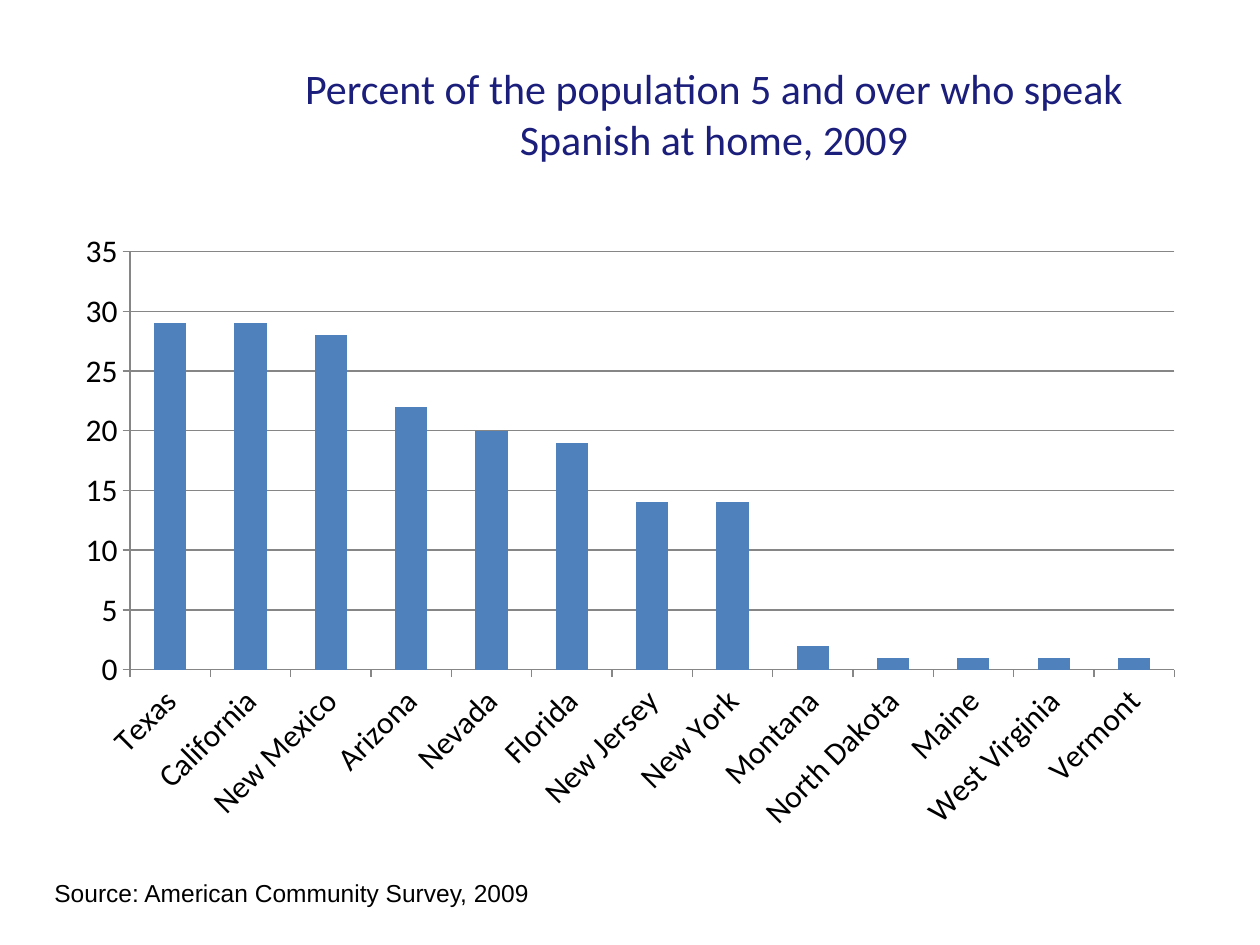
from pptx import Presentation
from pptx import util as u
from pptx.chart.data import CategoryChartData
from pptx.dml.color import RGBColor
from pptx.enum import chart as ch, text

EMU_PER_PX = 914400 / 126

SPANISH_SPEAKERS = {
    "Texas": 29,
    "California": 29,
    "New Mexico": 28,
    "Arizona": 22,
    "Nevada": 20,
    "Florida": 19,
    "New Jersey": 14,
    "New York": 14,
    "Montana": 2,
    "North Dakota": 1,
    "Maine": 1,
    "West Virginia": 1,
    "Vermont": 1,
}


def px(length):
    return u.Emu(round(length * EMU_PER_PX))


def colour(value):
    return RGBColor.from_string(value)


def style_font(font, size, name, hue):
    font.size = u.Pt(size)
    font.name = name
    font.bold = False
    font.color.rgb = colour(hue)


def write(frame, words, size, name, hue="000000", align=text.PP_ALIGN.LEFT,
          anchor=text.MSO_ANCHOR.TOP, wrap=True, fit=text.MSO_AUTO_SIZE.NONE):
    frame.word_wrap = wrap
    frame.auto_size = fit
    frame.vertical_anchor = anchor
    paragraph = frame.paragraphs[0]
    paragraph.alignment = align
    run = paragraph.add_run()
    run.text = words
    style_font(run.font, size, name, hue)


def add_title(slide, words):
    title = slide.shapes.title
    title.left, title.top, title.width, title.height = map(px, (231, 31, 966, 164))
    write(title.text_frame, words, size=24, name="Calibri", hue="1B1E7A",
          align=text.PP_ALIGN.CENTER, anchor=text.MSO_ANCHOR.MIDDLE)


def style_axis(axis):
    axis.major_tick_mark = ch.XL_TICK_MARK.OUTSIDE
    axis.minor_tick_mark = ch.XL_TICK_MARK.NONE
    axis.format.line.color.rgb = colour("868686")
    style_font(axis.tick_labels.font, 18, "Calibri", "000000")


def add_state_chart(slide, shares):
    data = CategoryChartData()
    data.categories = list(shares)
    data.add_series("Series 1", list(shares.values()))
    chart = slide.shapes.add_chart(
        ch.XL_CHART_TYPE.COLUMN_CLUSTERED, *map(px, (63, 220, 1134, 624)), data).chart
    chart.has_legend = False
    chart.has_title = False
    style_font(chart.font, 18, "Calibri", "000000")

    states, percent = chart.category_axis, chart.value_axis
    for axis in (states, percent):
        style_axis(axis)
    states._element.txPr.bodyPr.set("rot", "-2700000")
    percent.minimum_scale, percent.maximum_scale, percent.major_unit = 0, 35, 5
    percent.has_major_gridlines = True
    percent.major_gridlines.format.line.color.rgb = colour("868686")

    plot = chart.plots[0]
    plot.gap_width = 150
    plot.vary_by_categories = False
    columns = plot.series[0].format.fill
    columns.solid()
    columns.fore_color.rgb = colour("4F81BD")


def add_source(slide, words):
    source = slide.shapes.add_textbox(*map(px, (42, 872, 503, 72)))
    write(source.text_frame, words, size=14, name="Arial", wrap=False,
          fit=text.MSO_AUTO_SIZE.SHAPE_TO_FIT_TEXT)


def main():
    deck = Presentation()
    deck.slide_width, deck.slide_height = px(1260), px(945)
    slide = deck.slides.add_slide(deck.slide_layouts.get_by_name("Title Only"))
    slide.background.fill.solid()
    slide.background.fill.fore_color.rgb = colour("FFFFFF")
    add_title(slide, "Percent of the population 5 and over who speak Spanish at home, 2009")
    add_state_chart(slide, SPANISH_SPEAKERS)
    add_source(slide, "Source: American Community Survey, 2009")
    deck.save("out.pptx")


if __name__ == "__main__":
    main()
